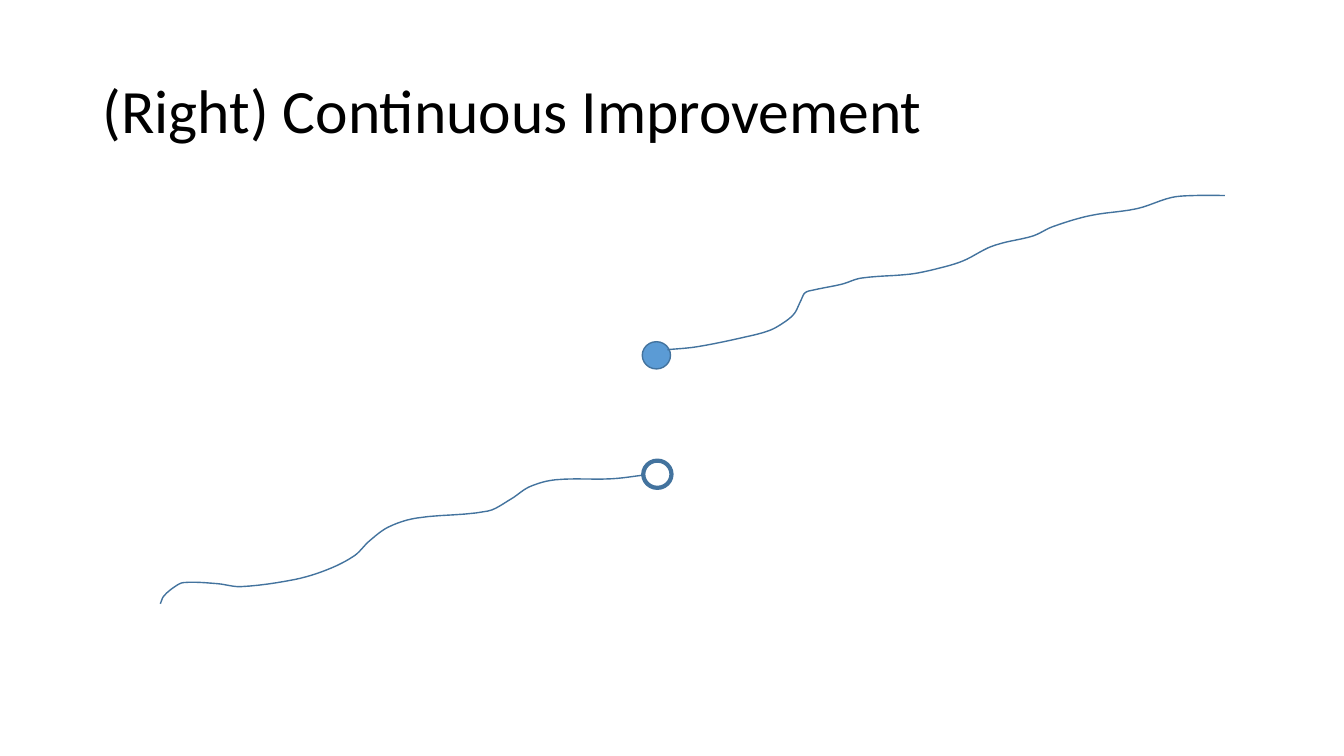
from pptx import Presentation
from pptx.dml.color import RGBColor
from pptx.enum.shapes import MSO_SHAPE
from pptx.enum.text import MSO_ANCHOR
from pptx.util import Inches, Pt

OVAL = MSO_SHAPE.OVAL
MIDDLE = MSO_ANCHOR.MIDDLE
COLORS = {"text": "000000", "curve": "43739E", "closed": "5B9BD5", "open": "FFFFFF"}

STEPS_PER_SPAN = 6
DOT_WIDTH, DOT_HEIGHT = 0.28, 0.27

BEFORE_JUMP = [
    (1.59, 5.99), (1.62, 5.92), (1.72, 5.83), (1.82, 5.78), (2.15, 5.79), (2.39, 5.82),
    (2.92, 5.75), (3.25, 5.65), (3.52, 5.51), (3.66, 5.37), (3.85, 5.23), (4.13, 5.14),
    (4.84, 5.07), (5.07, 4.95), (5.25, 4.83), (5.51, 4.76), (6.07, 4.75), (6.41, 4.71),
]
AFTER_JUMP = [
    (6.62, 3.47), (6.92, 3.44), (7.41, 3.34), (7.63, 3.28), (7.76, 3.21), (7.88, 3.11),
    (7.94, 2.99), (7.98, 2.91), (8.06, 2.88), (8.35, 2.82), (8.54, 2.76), (9.03, 2.72),
    (9.28, 2.67), (9.55, 2.59), (9.8, 2.46), (9.95, 2.41), (10.25, 2.34), (10.44, 2.25),
    (10.81, 2.14), (11.28, 2.07), (11.62, 1.96), (11.86, 1.94), (12.15, 1.94),
]


def smooth(knots):
    neighbours = zip(knots[:1] + knots[:-1], knots[1:] + knots[-1:])
    slopes = [(y1 - y0) / (x1 - x0) for (x0, y0), (x1, y1) in neighbours]
    points = [knots[0]]
    for (x0, y0), (x1, y1), slope0, slope1 in zip(knots, knots[1:], slopes, slopes[1:]):
        span = x1 - x0
        for step in range(1, STEPS_PER_SPAN + 1):
            t = step / STEPS_PER_SPAN
            blend = t * t * (3 - 2 * t)
            bend = t * (1 - t) * span * (slope0 * (1 - t) - slope1 * t)
            points.append((x0 + t * span, y0 + blend * (y1 - y0) + bend))
    return points


def paint(part, fill, line_width):
    part.shadow.inherit = False
    if fill:
        part.fill.solid()
        part.fill.fore_color.rgb = RGBColor.from_string(COLORS[fill])
    else:
        part.fill.background()
    part.line.color.rgb = RGBColor.from_string(COLORS["curve"])
    part.line.width = Pt(line_width)


prs = Presentation()
prs.slide_width = Inches(13.33)
prs.slide_height = Inches(7.5)
slide = prs.slides.add_slide(prs.slide_layouts[6])

title = slide.shapes.add_textbox(Inches(0.92), Inches(0.4), Inches(11.5), Inches(1.45))
title.text_frame.word_wrap = True
title.text_frame.vertical_anchor = MIDDLE
heading = title.text_frame.paragraphs[0]
heading.text = "(Right) Continuous Improvement"
heading.line_spacing = 0.9
heading_font = heading.runs[0].font
heading_font.name = "Calibri"
heading_font.size = Pt(44)
heading_font.color.rgb = RGBColor.from_string(COLORS["text"])

for knots in (BEFORE_JUMP, AFTER_JUMP):
    start, *rest = [(Inches(x), Inches(y)) for x, y in smooth(knots)]
    outline = slide.shapes.build_freeform(*start)
    outline.add_line_segments(rest, close=False)
    paint(outline.convert_to_shape(), None, 1)

    if knots is BEFORE_JUMP:
        for left, top, state, line_width in [(6.38, 4.57, "open", 3), (6.37, 3.39, "closed", 1)]:
            dot = slide.shapes.add_shape(
                OVAL, Inches(left), Inches(top), Inches(DOT_WIDTH), Inches(DOT_HEIGHT)
            )
            paint(dot, state, line_width)

prs.save("out.pptx")
